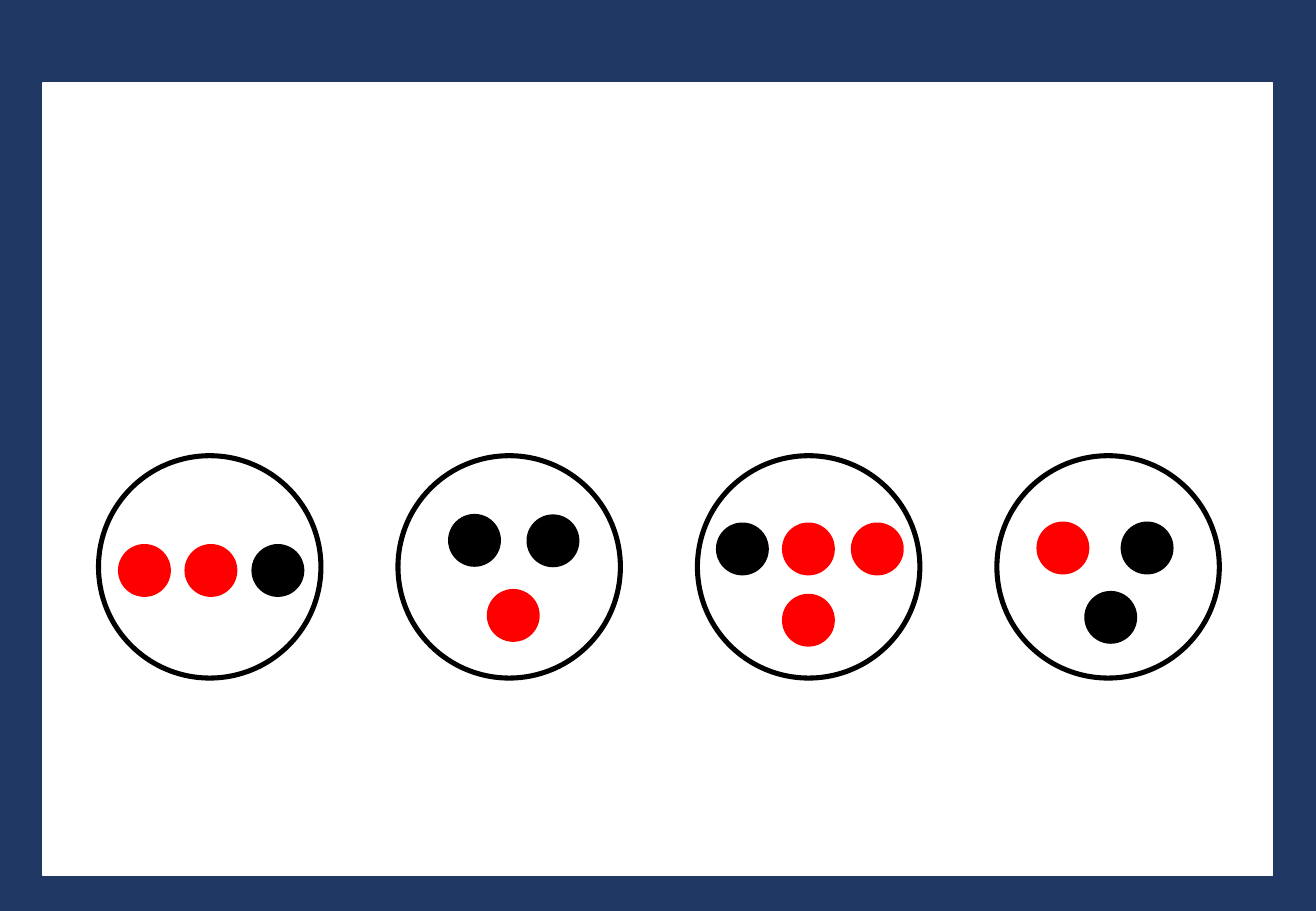
from pptx import Presentation
from pptx.dml.color import RGBColor
from pptx.enum.shapes import MSO_SHAPE
from pptx.util import Cm, Pt

WIDTH, HEIGHT = 27.51, 19.05
NAVY, WHITE, RED, BLACK = "203864", "FFFFFF", "FF0000", "000000"
DISH, DOT = 4.65, 1
LEFT, TOP, PITCH = 2.06, 9.53, 6.265

DISHES = [
    [(0.46, 1.9, RED), (1.85, 1.9, RED), (3.25, 1.9, BLACK)],
    [(1.1, 1.27, BLACK), (2.74, 1.28, BLACK), (1.91, 2.84, RED)],
    [(0.44, 1.45, BLACK), (1.82, 1.45, RED), (3.26, 1.45, RED), (1.82, 2.94, RED)],
    [(0.88, 1.43, RED), (2.64, 1.43, BLACK), (1.88, 2.88, BLACK)],
]


def color(code):
    return RGBColor.from_string(code)


def draw(shapes, kind, box, fill, line, weight):
    shape = shapes.add_shape(kind, *[Cm(value) for value in box])
    shape.shadow.inherit = False
    if fill:
        shape.fill.solid()
        shape.fill.fore_color.rgb = color(fill)
    else:
        shape.fill.background()
    shape.line.color.rgb = color(line)
    shape.line.width = Pt(weight)


def add_frame(slide, box):
    left, top, width, height = box
    back = slide.background.fill
    back.solid()
    back.fore_color.rgb = color(NAVY)
    panel = (left + 0.9, top + 1.73, width - 1.81, height - 2.47)
    draw(slide.shapes, MSO_SHAPE.RECTANGLE, panel, WHITE, WHITE, 1)


def add_dish(slide, box, dots):
    left, top = box[:2]
    shapes = slide.shapes.add_group_shape().shapes
    draw(shapes, MSO_SHAPE.OVAL, box, None, BLACK, 3)
    for across, down, tint in dots:
        place = (left + across, top + down, DOT, DOT)
        draw(shapes, MSO_SHAPE.OVAL, place, tint, tint, 3)


def main():
    deck = Presentation()
    deck.slide_width, deck.slide_height = Cm(WIDTH), Cm(HEIGHT)
    slide = deck.slides.add_slide(deck.slide_layouts[6])
    add_frame(slide, (0, 0, WIDTH, HEIGHT))
    for index, dots in enumerate(DISHES):
        add_dish(slide, (LEFT + index * round(PITCH, 2), TOP, DISH, DISH), dots)
    deck.save("out.pptx")


if __name__ == "__main__":
    main()
